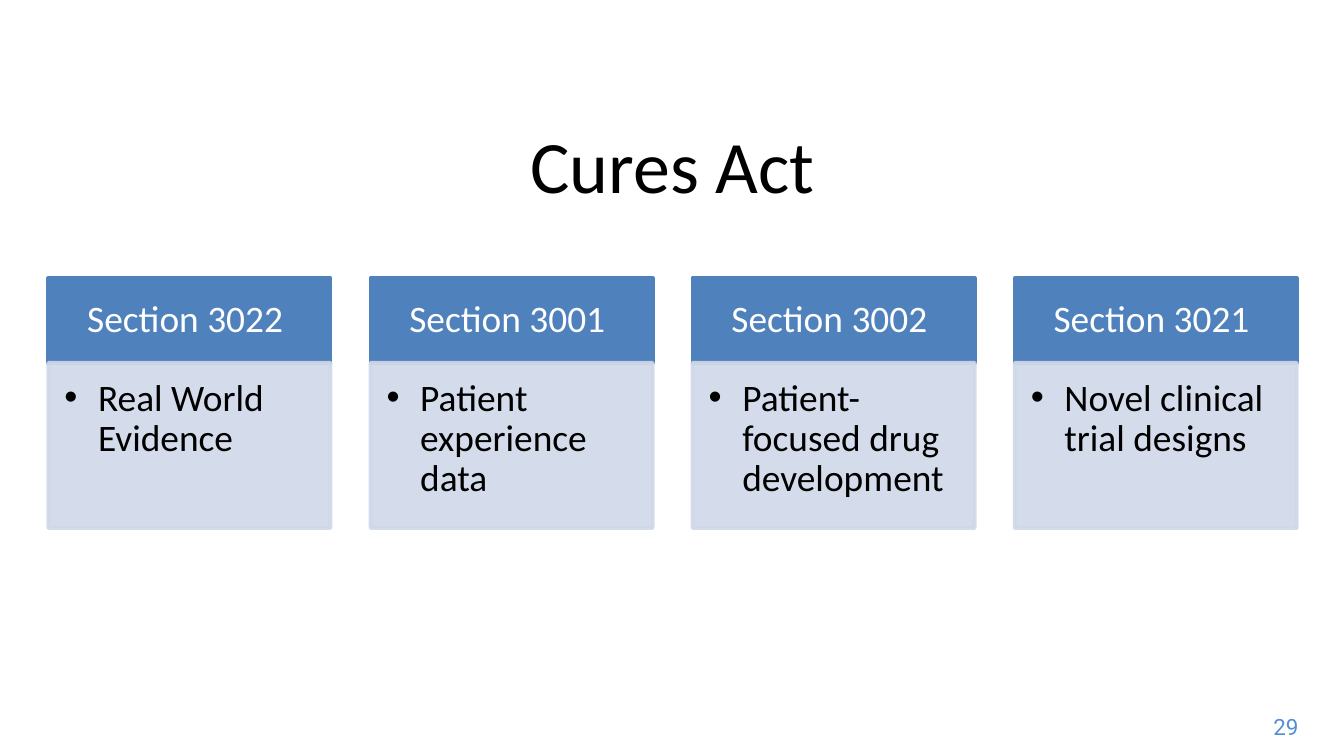
from dataclasses import dataclass

from lxml.etree import SubElement
from pptx import Presentation
from pptx.dml.color import RGBColor as RGB
from pptx.enum.shapes import MSO_SHAPE as SHAPE
from pptx.enum.text import MSO_ANCHOR as ANCHOR, PP_ALIGN as ALIGN
from pptx.oxml.ns import qn
from pptx.util import Inches, Pt


@dataclass(frozen=True)
class Theme:
    text: RGB = RGB.from_string("000000")
    header: RGB = RGB.from_string("4F81BD")
    header_text: RGB = RGB.from_string("FFFFFF")
    body: RGB = RGB.from_string("D0D8E8")
    number: RGB = RGB.from_string("558ED5")
    body_opacity: int = 90
    font: str = "Calibri"
    number_font: str = "Roboto"
    title_size: float = 39.6
    card_size: float = 20
    number_size: float = 12


THEME = Theme()

SECTIONS = [
    ("Section 3022 ", "Real World Evidence"),
    ("Section 3001 ", "Patient experience data"),
    ("Section 3002 ", "Patient-focused drug development"),
    ("Section 3021 ", "Novel clinical trial designs"),
]


def set_all(obj, values):
    for name, value in values.items():
        setattr(obj, name, value)


def set_frame(tf, insets, anchor):
    """Set the insets, given as left, top, right, bottom, and the anchor."""
    sides = ("margin_left", "margin_top", "margin_right", "margin_bottom")
    set_all(tf, dict(zip(sides, map(Inches, insets))))
    set_all(tf, {"word_wrap": True, "vertical_anchor": anchor})


def write(p, text, size, color, font=THEME.font, **layout):
    set_all(p, layout)
    r = p.add_run()
    r.text = text
    set_all(r.font, {"name": font, "size": Pt(size)})
    r.font.color.rgb = color


def add_bullet(p, indent):
    pPr = p._p.get_or_add_pPr()
    pPr.set("marL", str(Inches(indent)))
    pPr.set("indent", str(-Inches(indent)))
    SubElement(pPr, qn("a:buFont")).set("typeface", "Arial")
    SubElement(pPr, qn("a:buChar")).set("char", "•")


def add_panel(shapes, x, y, w, h, color, opacity=100):
    sp = shapes.add_shape(SHAPE.RECTANGLE, *map(Inches, (x, y, w, h)))
    sp.shadow.inherit = False
    sp.line.width = Pt(2)
    for fill in (sp.fill, sp.line.fill):
        fill.solid()
        fill.fore_color.rgb = color
    if opacity < 100:
        for clr in sp._element.spPr.iter(qn("a:srgbClr")):
            SubElement(clr, qn("a:alpha")).set("val", str(opacity * 1000))
    return sp


def add_title(slide, x, y, w, h):
    title = slide.shapes.title
    set_all(title, dict(zip(("left", "top", "width", "height"),
                            map(Inches, (x, y, w, h)))))
    tf = title.text_frame
    set_frame(tf, (0.1, 0.05, 0.1, 0.05), ANCHOR.MIDDLE)
    write(tf.paragraphs[0], "Cures Act", THEME.title_size, THEME.text,
          alignment=ALIGN.CENTER)


def add_card(shapes, x, y, w, h, heading, point):
    """Draw a coloured heading with a bulleted panel below it."""
    head_h = 0.63
    head = add_panel(shapes, x, y, w, head_h, THEME.header)
    tf = head.text_frame
    set_frame(tf, (0.16, 0.09, 0.16, 0.09), ANCHOR.MIDDLE)
    write(tf.paragraphs[0], heading, THEME.card_size, THEME.header_text,
          alignment=ALIGN.CENTER, line_spacing=0.9)

    body = add_panel(shapes, x, y + head_h, w, h - head_h, THEME.body,
                     THEME.body_opacity)
    tf = body.text_frame
    set_frame(tf, (0.12, 0.12, 0.16, 0.17), ANCHOR.TOP)
    p = tf.paragraphs[0]
    add_bullet(p, 0.25)
    write(p, point, THEME.card_size, THEME.text,
          alignment=ALIGN.LEFT, line_spacing=0.9, level=1)


def add_cards(slide, x, y, w, h):
    """Spread the section cards evenly over the box."""
    group = slide.shapes.add_group_shape()
    card_w = 2.1
    step = (w - card_w) / (len(SECTIONS) - 1)
    for i, (heading, point) in enumerate(SECTIONS):
        add_card(group.shapes, x + i * step, y, card_w, h, heading, point)


def add_page_number(slide, x, y, w, h):
    box = slide.shapes.add_textbox(*map(Inches, (x, y, w, h)))
    tf = box.text_frame
    tf.word_wrap = False
    write(tf.paragraphs[0], "29", THEME.number_size, THEME.number,
          THEME.number_font, alignment=ALIGN.RIGHT)


def main():
    prs = Presentation()
    width = Inches(10)
    set_all(prs, {"slide_width": width, "slide_height": width * 9 // 16})
    slide = prs.slides.add_slide(prs.slide_layouts[5])
    add_page_number(slide, 9.35, 5.26, 0.41, 0.3)
    add_title(slide, 0.35, 0.84, 9.31, 0.76)
    add_cards(slide, 0.36, 2.07, 9.29, 1.86)
    prs.save("out.pptx")


if __name__ == "__main__":
    main()
